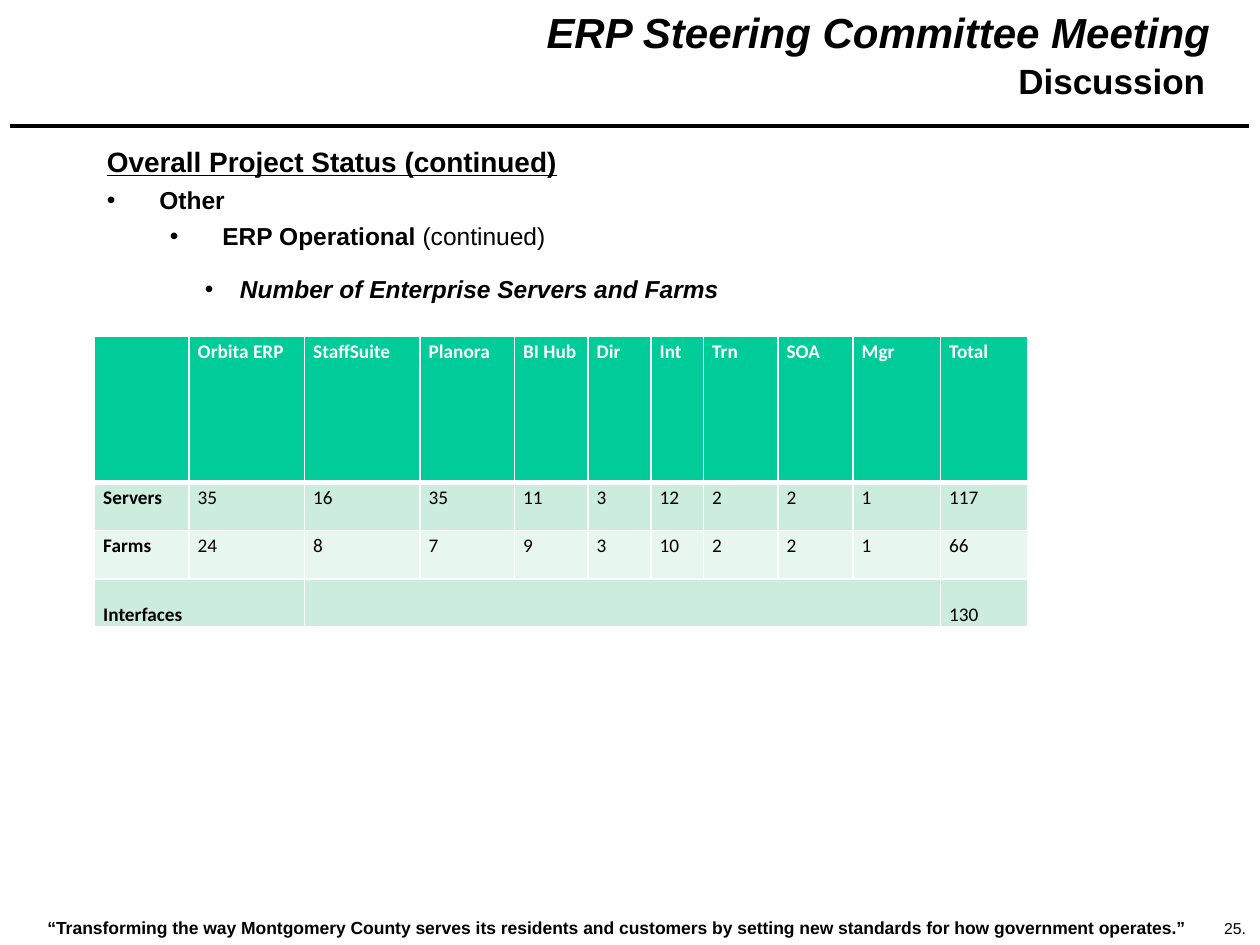
import pptx
import pptx.dml.color
import pptx.enum.shapes
import pptx.enum.text
import pptx.oxml
import pptx.oxml.ns
import pptx.util

Pt = pptx.util.Pt
RGB = pptx.dml.color.RGBColor.from_string
ALIGN = pptx.enum.text.PP_ALIGN
ANCHOR = pptx.enum.text.MSO_ANCHOR
NAMESPACE = pptx.oxml.ns.nsdecls("a")

theme = {
    "ink": "000000", "white": "FFFFFF", "header": "00CC99",
    "bands": ["CCECDE", "E7F6EF", "CCECDE"],
    "text font": "Arial", "table font": "Calibri",
    "banner": 24, "title": 20, "heading": 16, "body": 14,
    "table": 11, "footer": 10, "number": 9,
}


def add_span(para, text, size, bold=False, italic=False, underline=False,
             color="ink", font="text font"):
    span = para.add_run()
    span.text = text
    span.font.name = theme[font]
    span.font.size = Pt(theme[size])
    span.font.bold = bold
    span.font.italic = italic
    span.font.underline = underline
    span.font.color.rgb = RGB(theme[color])


def add_box(left, top, width, height, wrap=True):
    box = page.shapes.add_textbox(Pt(left), Pt(top), Pt(width), Pt(height))
    box.text_frame.word_wrap = wrap
    return box.text_frame


deck = pptx.Presentation()
deck.slide_width, deck.slide_height = Pt(720), Pt(540)
page = deck.slides.add_slide(deck.slide_layouts[5])

# Banner and rule
para = add_box(204, 0, 494.5, 36).paragraphs[0]
para.alignment = ALIGN.RIGHT
add_span(para, "ERP Steering Committee Meeting", "banner", bold=True, italic=True)
rule = page.shapes.add_connector(
    pptx.enum.shapes.MSO_CONNECTOR.STRAIGHT, Pt(6), Pt(72), Pt(714), Pt(72))
rule.line.color.rgb = RGB(theme["ink"])
rule.line.width = Pt(2)
rule._element.spPr.append(pptx.oxml.parse_xml(f"<a:effectLst {NAMESPACE}/>"))

# Title
title = page.shapes.title
title.left, title.top, title.width, title.height = Pt(90), Pt(30.5), Pt(606), Pt(31)
title.text_frame.word_wrap = True
title.text_frame.auto_size = pptx.enum.text.MSO_AUTO_SIZE.NONE
title.text_frame.vertical_anchor = ANCHOR.MIDDLE
para = title.text_frame.paragraphs[0]
para.alignment = ALIGN.RIGHT
add_span(para, "Discussion", "title", bold=True)

# Status outline: level, left margin, bullet hang, space before, spans
outline = [
    (0, 0, 0, 0, [("Overall Project Status (continued)", "heading", True, False, True)]),
    (1, 30, 30, 4, [("Other", "body", True)]),
    (1, 66, 30, 4, [("ERP Operational ", "body", True), ("(continued)", "body")]),
    (4, 76, 20, 13.5, [("Number of Enterprise Servers and Farms", "body", True, True)]),
]
frame = add_box(54, 79, 642, 431)
for index, (level, margin, hang, before, spans) in enumerate(outline):
    para = frame.add_paragraph() if index else frame.paragraphs[0]
    para.level = level
    if hang:
        properties = para._p.get_or_add_pPr()
        properties.set("marL", str(Pt(margin)))
        properties.set("indent", str(-Pt(hang)))
        properties.append(pptx.oxml.parse_xml(f'<a:buFont {NAMESPACE} typeface="Arial"/>'))
        properties.append(pptx.oxml.parse_xml(f'<a:buChar {NAMESPACE} char="•"/>'))
        para.space_before = Pt(before)
    for span in spans:
        add_span(para, *span)

# Server and farm table
rows = [
    ["", "Orbita ERP", "StaffSuite", "Planora", "BI Hub", "Dir", "Int", "Trn",
     "SOA", "Mgr", "Total"],
    ["Servers", 35, 16, 35, 11, 3, 12, 2, 2, 1, 117],
    ["Farms", 24, 8, 7, 9, 3, 10, 2, 2, 1, 66],
    ["Interfaces"] + [""] * 9 + [130],
]
widths = [54, 66, 66, 54, 42, 36, 30, 42.5, 43, 50, 50]
heights = [83.5, 27.5, 27.5, 27.5]
table = page.shapes.add_table(len(rows), len(widths), Pt(54), Pt(192.25),
                              Pt(sum(widths)), Pt(sum(heights))).table
table.first_row = table.horz_banding = False
for column, width in zip(table.columns, widths):
    column.width = Pt(width)
for row, height in zip(table.rows, heights):
    row.height = Pt(height)
last = len(rows) - 1
table.cell(last, 0).merge(table.cell(last, 1))
table.cell(last, 2).merge(table.cell(last, 9))

fills = [theme["header"]] + theme["bands"]
for r, values in enumerate(rows):
    for c, value in enumerate(values):
        cell = table.cell(r, c)
        cell.margin_left = cell.margin_right = Pt(5)
        cell.margin_top = cell.margin_bottom = 0
        cell.vertical_anchor = ANCHOR.BOTTOM if r == last else ANCHOR.TOP
        for side in "LRTB":
            heavy = (r, side) in ((0, "B"), (1, "T"))
            cell._tc.get_or_add_tcPr().append(pptx.oxml.parse_xml(
                f'<a:ln{side} {NAMESPACE} w="{Pt(3 if heavy else 1)}"><a:solidFill>'
                f'<a:srgbClr val="{theme["white"]}"/></a:solidFill></a:ln{side}>'))
        cell.fill.solid()
        cell.fill.fore_color.rgb = RGB(fills[r])
        if value != "":
            para = cell.text_frame.paragraphs[0]
            para.line_spacing = 1.15
            add_span(para, str(value), "table", bold=r == 0 or c == 0,
                     color="ink" if r else "white", font="table font")

# Footer and page number
add_span(add_box(20, 520.5, 700, 19.5).paragraphs[0],
         "“Transforming the way Montgomery County serves its residents and customers "
         "by setting new standards for how government operates.”", "footer", bold=True)
add_span(add_box(692.5, 521.5, 28, 18, wrap=False).paragraphs[0], "25.", "number")

deck.save("out.pptx")
